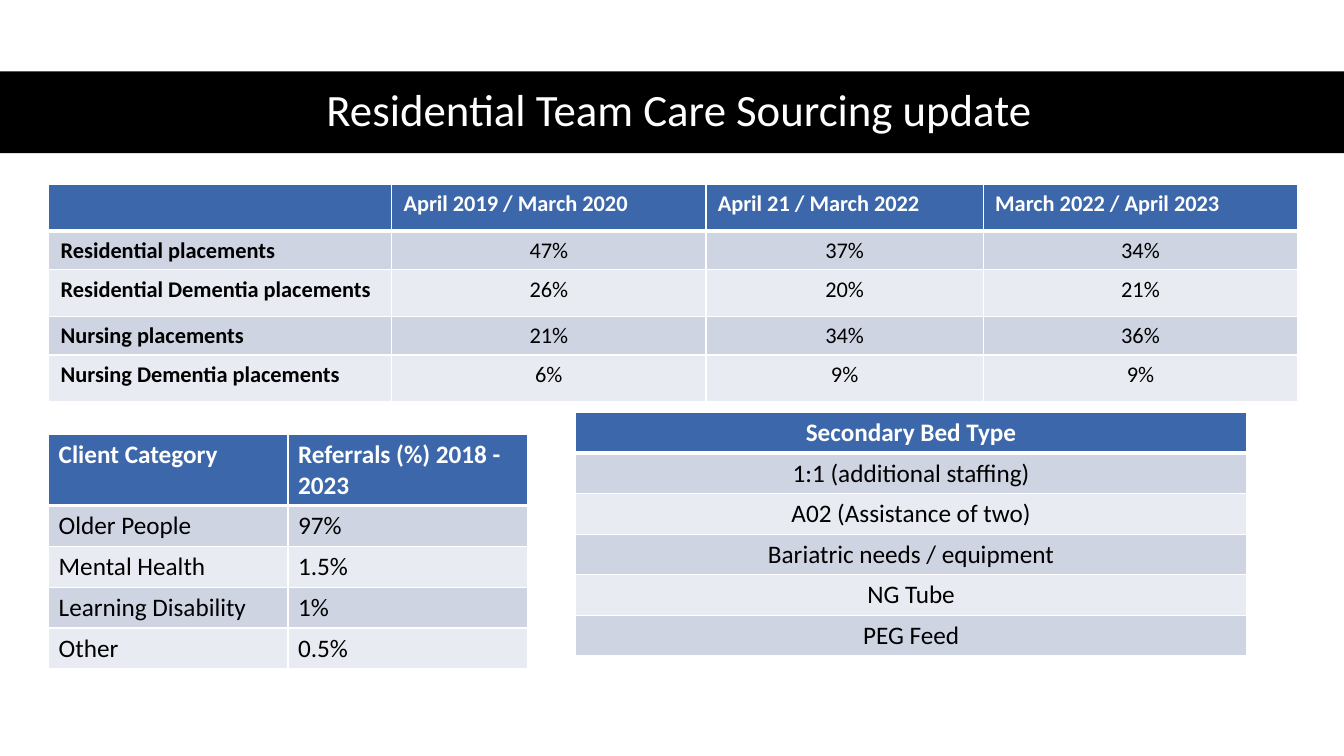
from lxml import etree
from pptx import Presentation
from pptx.dml.color import RGBColor
from pptx.enum.shapes import MSO_SHAPE
from pptx.enum.text import MSO_ANCHOR, PP_ALIGN
from pptx.oxml.ns import qn
from pptx.util import Cm, Pt

LEFT, CENTER = PP_ALIGN.LEFT, PP_ALIGN.CENTER
MIDDLE = MSO_ANCHOR.MIDDLE
RECTANGLE = MSO_SHAPE.RECTANGLE

THEME = {
    "font": "Calibri",
    "title_size": 32,
    "body_size": 18,
    "placement_size": 16,
    "white": "FFFFFF",
    "black": "000000",
    "header": "3C68AB",
    "bands": ("CED4E2", "E8EBF1"),
    "grid": 1,
    "header_rule": 3,
}

TITLE = "Residential Team Care Sourcing update"

TABLES = [
    {
        "rows": [
            ("", "April 2019 / March 2020", "April 21 / March 2022", "March 2022 / April 2023"),
            ("Residential placements", "47%", "37%", "34%"),
            ("Residential Dementia placements", "26%", "20%", "21%"),
            ("Nursing placements", "21%", "34%", "36%"),
            ("Nursing Dementia placements", "6%", "9%", "9%"),
        ],
        "origin": (1.23, 4.65),
        "widths": (8.64, 7.92, 6.99, 7.92),
        "heights": (1.17, 0.89, 1.17, 0.89, 1.17),
        "size": THEME["placement_size"],
        "margins": (0.3, 0.15),
        "aligns": (LEFT, CENTER, CENTER, CENTER),
        "header_align": LEFT,
        "bold_labels": True,
    },
    {
        "rows": [
            ("Client Category", "Referrals (%) 2018 - 2023"),
            ("Older People", "97%"),
            ("Mental Health", "1.5%"),
            ("Learning Disability", "1%"),
            ("Other", "0.5%"),
        ],
        "origin": (1.23, 10.95),
        "widths": (6.03, 6.03),
        "heights": (1.78,) + (1.03,) * 4,
        "size": THEME["body_size"],
        "margins": (0.25, 0.13),
        "aligns": (LEFT, LEFT),
        "header_align": LEFT,
        "bold_labels": False,
    },
    {
        "rows": [
            ("Secondary Bed Type",),
            ("1:1 (additional staffing)",),
            ("A02 (Assistance of two)",),
            ("Bariatric needs / equipment",),
            ("NG Tube",),
            ("PEG Feed",),
        ],
        "origin": (14.5, 10.39),
        "widths": (16.92,),
        "heights": (1.0,) * 6,
        "size": THEME["body_size"],
        "margins": (0.25, 0.13),
        "aligns": (CENTER,),
        "header_align": CENTER,
        "bold_labels": False,
    },
]


def rgb(name):
    return RGBColor.from_string(name)


def write(frame, text, size, color, bold=False, align=LEFT, spacing=None):
    para = frame.paragraphs[0]
    para.alignment = align
    if spacing:
        para.line_spacing = spacing
    if text:
        span = para.add_run()
        span.text = text
        span.font.name = THEME["font"]
        span.font.size = Pt(size)
        span.font.bold = bold
        span.font.color.rgb = rgb(color)


def add_borders(cell, top, bottom):
    properties = cell._tc.get_or_add_tcPr()
    sides = (("lnL", THEME["grid"]), ("lnR", THEME["grid"]), ("lnT", top), ("lnB", bottom))
    for side, width in sides:
        line = etree.SubElement(properties, qn("a:" + side), w=str(Pt(width)))
        fill = etree.SubElement(line, qn("a:solidFill"))
        etree.SubElement(fill, qn("a:srgbClr"), val=THEME["white"])


def add_grid(page, rows, origin, widths, heights, size, margins, aligns, header_align, bold_labels):
    left, top = origin
    table = page.shapes.add_table(
        len(rows), len(widths), Cm(left), Cm(top), Cm(sum(widths)), Cm(sum(heights))
    ).table
    for column, width in zip(table.columns, widths):
        column.width = Cm(width)
    for r, (values, height) in enumerate(zip(rows, heights)):
        table.rows[r].height = Cm(height)
        header = r == 0
        for c, value in enumerate(values):
            cell = table.cell(r, c)
            cell.margin_left = cell.margin_right = Cm(margins[0])
            cell.margin_top = cell.margin_bottom = Cm(margins[1])
            add_borders(
                cell,
                THEME["header_rule"] if r == 1 else THEME["grid"],
                THEME["header_rule"] if header else THEME["grid"],
            )
            cell.fill.solid()
            cell.fill.fore_color.rgb = rgb(THEME["header"] if header else THEME["bands"][(r - 1) % 2])
            write(
                cell.text_frame,
                value,
                size,
                THEME["white"] if header else THEME["black"],
                bold=header or (bold_labels and c == 0),
                align=header_align if header else aligns[c],
            )


def add_title(page, slide_width):
    band = page.shapes.add_shape(RECTANGLE, 0, Cm(1.8), slide_width, Cm(2.06))
    band.shadow.inherit = False
    band.fill.solid()
    band.fill.fore_color.rgb = rgb(THEME["black"])
    band.line.fill.background()
    box = page.shapes.add_textbox(Cm(1.55), Cm(1.78), Cm(31.14), Cm(2.06))
    frame = box.text_frame
    frame.word_wrap = True
    frame.vertical_anchor = MIDDLE
    write(frame, TITLE, THEME["title_size"], THEME["white"], align=CENTER, spacing=0.9)


def main():
    deck = Presentation()
    deck.slide_width, deck.slide_height = Cm(33.87), Cm(19.05)
    page = deck.slides.add_slide(deck.slide_layouts[6])
    add_title(page, deck.slide_width)
    for table in TABLES:
        add_grid(page, **table)
    deck.save("out.pptx")


if __name__ == "__main__":
    main()
